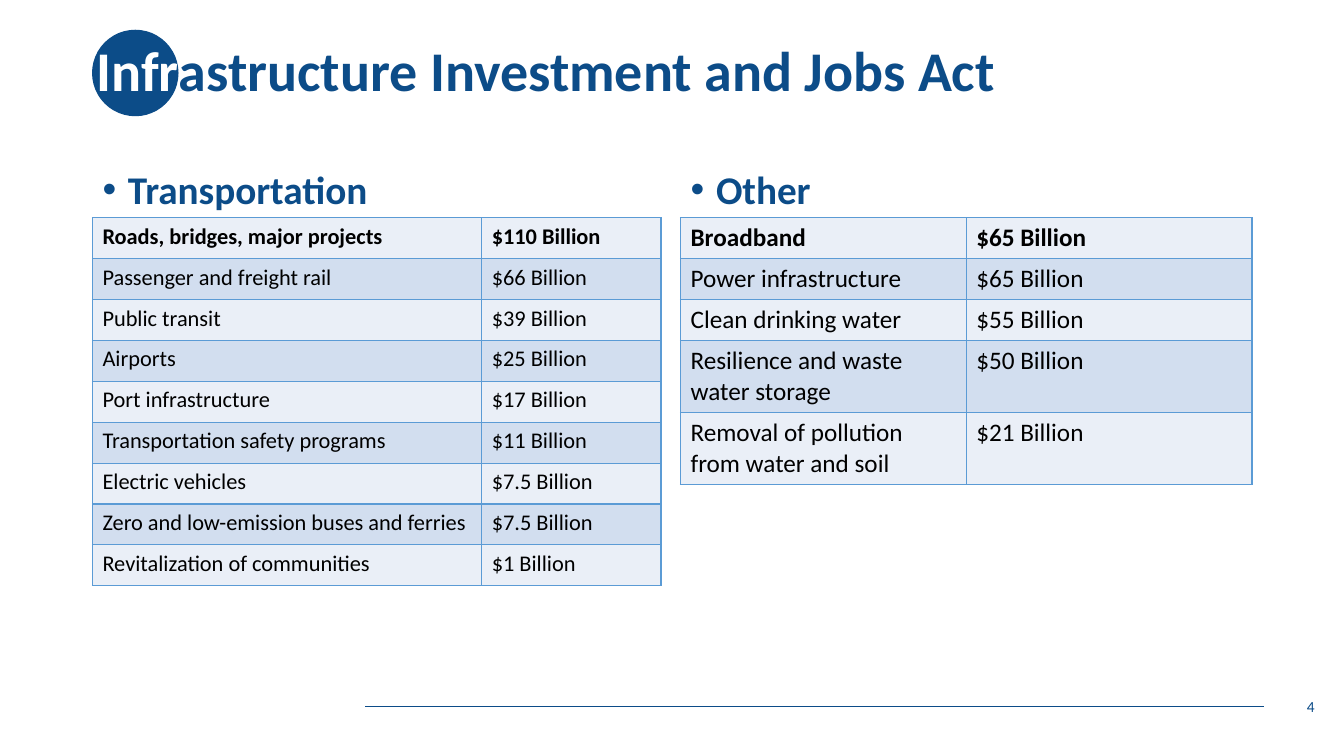
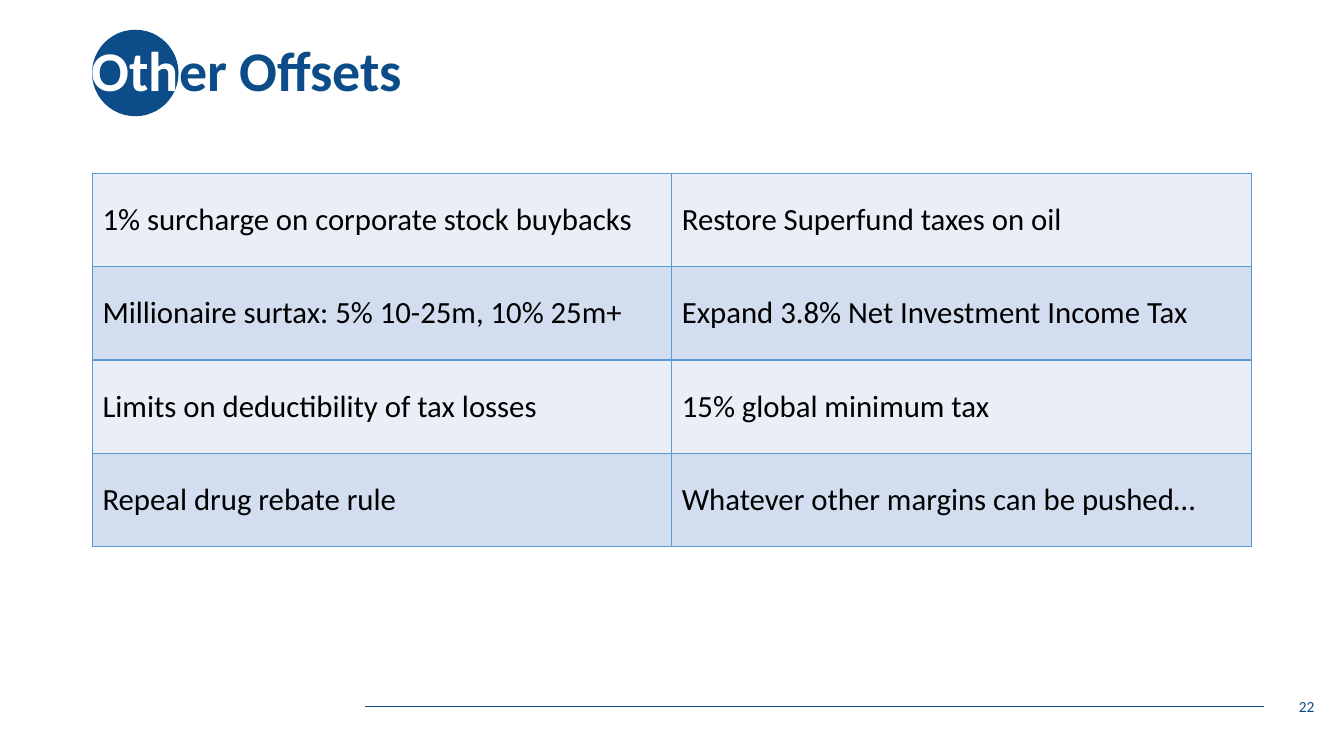
from lxml.etree import SubElement
from pptx import Presentation
from pptx.dml.color import RGBColor
from pptx.enum.shapes import MSO_CONNECTOR, MSO_SHAPE
from pptx.enum.text import MSO_ANCHOR, MSO_AUTO_SIZE, PP_ALIGN
from pptx.oxml.ns import qn
from pptx.util import Cm, Pt

# Shared colours and formats
NAVY = RGBColor(0x0C, 0x4C, 0x88)
WHITE = RGBColor(0xFF, 0xFF, 0xFF)
BLACK = RGBColor(0x00, 0x00, 0x00)
BORDER_BLUE = RGBColor(0x5B, 0x9B, 0xD5)
ROW_FILLS = (RGBColor(0xEA, 0xEF, 0xF7), RGBColor(0xD2, 0xDE, 0xEF))

FONT = "Calibri"
TITLE_FONT = {"name": FONT, "size": Pt(40), "bold": True}
HEADING_FONT = {"name": FONT, "size": Pt(28), "bold": True}
NUMBER_FONT = {"name": FONT, "size": Pt(11), "bold": False}

# Shared layout
LEFT = Cm(2.33)
RIGHT_LEFT = Cm(17.15)
TABLE_TOP = Cm(5.49)
ROW_HEIGHT = 1.03
TWO_LINE_HEIGHT = 1.81

# Contents
TRANSPORTATION = [
    ("Roads, bridges, major projects", "$110 Billion"),
    ("Passenger and freight rail", "$66 Billion"),
    ("Public transit", "$39 Billion"),
    ("Airports", "$25 Billion"),
    ("Port infrastructure", "$17 Billion"),
    ("Transportation safety programs", "$11 Billion"),
    ("Electric vehicles", "$7.5 Billion"),
    ("Zero and low-emission buses and ferries", "$7.5 Billion"),
    ("Revitalization of communities", "$1 Billion"),
]
OTHER = [
    ("Broadband", "$65 Billion"),
    ("Power infrastructure", "$65 Billion"),
    ("Clean drinking water", "$55 Billion"),
    ("Resilience and waste water storage", "$50 Billion"),
    ("Removal of pollution from water and soil", "$21 Billion"),
]
OFFSETS = [
    ("1% surcharge on corporate stock buybacks", "Restore Superfund taxes on oil"),
    ("Millionaire surtax: 5% 10-25m, 10% 25m+", "Expand 3.8% Net Investment Income Tax"),
    ("Limits on deductibility of tax losses", "15% global minimum tax"),
    ("Repeal drug rebate rule", "Whatever other margins can be pushed…"),
]


def set_values(target, values):
    for name, value in values.items():
        setattr(target, name, value)


def place(shape, left, top, width, height):
    set_values(shape, {"left": left, "top": top, "width": width, "height": height})


def set_frame(shape, anchor):
    set_values(shape.text_frame, {
        "word_wrap": True, "auto_size": MSO_AUTO_SIZE.NONE, "vertical_anchor": anchor,
    })


def add_run(paragraph, text, values, color):
    run = paragraph.add_run()
    run.text = text
    set_values(run.font, values)
    run.font.color.rgb = color


def add_title(slide, left, white_part, navy_part):
    title = slide.shapes.title
    place(title, left, Cm(0), Cm(29.21), Cm(3.68))
    set_frame(title, MSO_ANCHOR.MIDDLE)
    paragraph = title.text_frame.paragraphs[0]
    set_values(paragraph, {"alignment": PP_ALIGN.LEFT, "line_spacing": 0.9, "space_before": Pt(0)})
    add_run(paragraph, white_part, TITLE_FONT, WHITE)
    add_run(paragraph, navy_part, TITLE_FONT, NAVY)


def add_decoration(slide):
    """Put the footer rule and the title circle behind the title."""
    rule = slide.shapes.add_connector(
        MSO_CONNECTOR.STRAIGHT, Cm(9.2), Cm(17.81), Cm(31.85), Cm(17.81))
    rule.line.color.rgb = NAVY
    rule.line.width = Pt(0.5)
    SubElement(rule.element.spPr, qn("a:effectLst"))

    circle = slide.shapes.add_shape(MSO_SHAPE.OVAL, Cm(2.32), Cm(0.75), Cm(2.18), Cm(2.18))
    circle.shadow.inherit = False
    circle.fill.solid()
    circle.fill.fore_color.rgb = NAVY
    circle.line.fill.background()

    for shape in (rule, circle):
        slide.shapes.title.element.addprevious(shape.element)


def add_page_number(slide, number):
    box = slide.shapes.add_textbox(Cm(25.76), Cm(17.3), Cm(7.62), Cm(1.02))
    set_frame(box, MSO_ANCHOR.MIDDLE)
    paragraph = box.text_frame.paragraphs[0]
    paragraph.alignment = PP_ALIGN.RIGHT
    add_run(paragraph, str(number), NUMBER_FONT, NAVY)


def add_slide(presentation, layout_name, title_left, title_parts, number):
    layout = presentation.slide_layouts.get_by_name(layout_name)
    slide = presentation.slides.add_slide(layout)
    add_title(slide, title_left, *title_parts)
    add_decoration(slide)
    add_page_number(slide, number)
    return slide


def fill_heading(placeholder, text, left, width):
    place(placeholder, left, Cm(3.2), width, Cm(2.29))
    set_frame(placeholder, MSO_ANCHOR.BOTTOM)
    paragraph = placeholder.text_frame.paragraphs[0]
    properties = paragraph._p.get_or_add_pPr()
    properties.set("marL", str(Cm(0.64)))
    properties.set("indent", str(-Cm(0.64)))
    SubElement(properties, qn("a:buFont"), typeface="Arial")
    SubElement(properties, qn("a:buChar"), char="•")
    set_values(paragraph, {"alignment": PP_ALIGN.LEFT, "line_spacing": 0.9, "space_before": Pt(0)})
    add_run(paragraph, text, HEADING_FONT, NAVY)


def add_borders(cell):
    properties = cell._tc.get_or_add_tcPr()
    for side in ("lnL", "lnR", "lnT", "lnB"):
        line = SubElement(properties, qn(f"a:{side}"), w=str(Pt(1)))
        fill = SubElement(line, qn("a:solidFill"))
        SubElement(fill, qn("a:srgbClr"), val=str(BORDER_BLUE))


def add_banded_table(slide, rows, left, top, widths, heights, size,
                     anchor=MSO_ANCHOR.TOP, bold_first=False):
    """Widths and heights are in centimetres."""
    table = slide.shapes.add_table(
        len(rows), len(widths), left, top, Cm(sum(widths)), Cm(sum(heights))).table
    set_values(table, {"first_row": False, "horz_banding": False})
    for column, width in zip(table.columns, widths):
        column.width = Cm(width)
    for index, (texts, height) in enumerate(zip(rows, heights)):
        table.rows[index].height = Cm(height)
        font = {"name": FONT, "size": size, "bold": bold_first and index == 0}
        for cell, text in zip(table.rows[index].cells, texts):
            add_borders(cell)
            cell.fill.solid()
            cell.fill.fore_color.rgb = ROW_FILLS[index % 2]
            cell.vertical_anchor = anchor
            add_run(cell.text_frame.paragraphs[0], text, font, BLACK)


def build_jobs_act(presentation):
    slide = add_slide(presentation, "Comparison", Cm(2.18),
                      ("Infr", "astructure Investment and Jobs Act"), 4)
    placeholders = {shape.placeholder_format.idx: shape for shape in slide.placeholders}
    fill_heading(placeholders[1], "Transportation", LEFT, Cm(14.33))
    fill_heading(placeholders[3], "Other", RIGHT_LEFT, Cm(14.4))
    # The tables take the place of the content placeholders
    for index in (2, 4):
        element = placeholders[index].element
        element.getparent().remove(element)
    add_banded_table(slide, TRANSPORTATION, LEFT, TABLE_TOP, (9.81, 4.52),
                     [ROW_HEIGHT] * len(TRANSPORTATION), Pt(16), bold_first=True)
    add_banded_table(slide, OTHER, RIGHT_LEFT, TABLE_TOP, (7.2, 7.2),
                     [ROW_HEIGHT] * 3 + [TWO_LINE_HEIGHT] * 2, Pt(18), bold_first=True)


def build_offsets(presentation):
    slide = add_slide(presentation, "Title Only", Cm(2.06), ("Oth", "er Offsets"), 22)
    add_banded_table(slide, OFFSETS, LEFT, Cm(4.37), (14.6, 14.6),
                     [2.35] * len(OFFSETS), Pt(22), anchor=MSO_ANCHOR.MIDDLE)


def main():
    presentation = Presentation()
    set_values(presentation, {"slide_width": Cm(33.87), "slide_height": Cm(19.05)})
    build_jobs_act(presentation)
    build_offsets(presentation)
    presentation.save("out.pptx")


if __name__ == "__main__":
    main()
